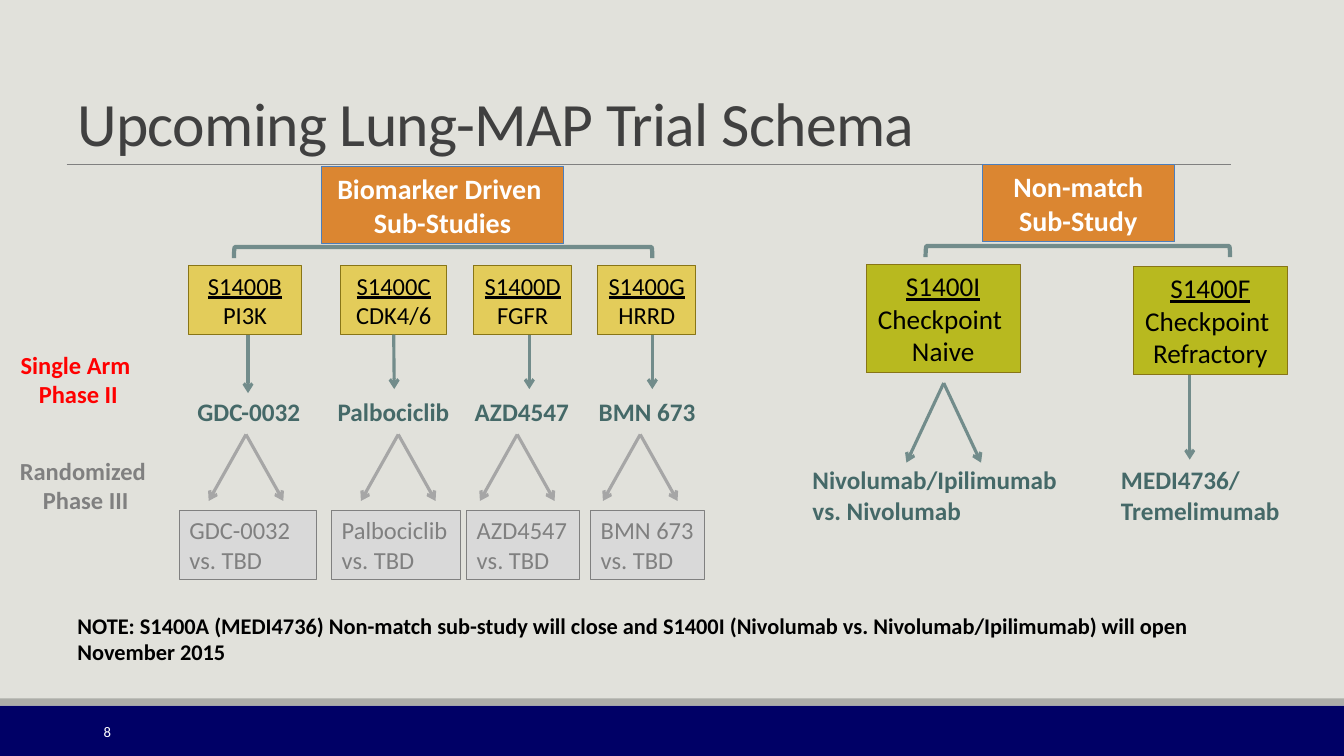
from lxml import etree
from pptx import Presentation
from pptx.dml.color import RGBColor
from pptx.enum.shapes import MSO_CONNECTOR, MSO_SHAPE
from pptx.enum.text import MSO_ANCHOR, PP_ALIGN
from pptx.oxml.ns import qn
from pptx.util import Pt

PX = 9144  # 100 px to the inch
FONT = "Calibri"
RECT, BRACKET = MSO_SHAPE.RECTANGLE, MSO_SHAPE.LEFT_BRACKET
STRAIGHT = MSO_CONNECTOR.STRAIGHT
LEFT, CENTER, RIGHT = PP_ALIGN.LEFT, PP_ALIGN.CENTER, PP_ALIGN.RIGHT
TOP, MIDDLE, BOTTOM = MSO_ANCHOR.TOP, MSO_ANCHOR.MIDDLE, MSO_ANCHOR.BOTTOM
SIDE_INSETS = {LEFT: (10, 0), CENTER: (0, 0), RIGHT: (0, 10)}

COLORS = {
    "background": "E1E1DB", "navy": "000066", "band": "ACADA8",
    "orange": "DB8631", "blue": "4B7EBC", "yellow": "E3CC5A",
    "olive": "B8B91F", "brown": "887517", "teal": "728C8B",
    "drug": "456968", "gray": "808080", "pale": "D9D9D9",
    "fork": "A6A6A6", "title": "404040", "red": "FF0000",
    "black": "000000", "white": "FFFFFF",
}


def rgb(name):
    return RGBColor.from_string(COLORS[name])


def write(sp, lines, size, color, align=LEFT, anchor=TOP, underline_first=False, **fmt):
    tf = sp.text_frame
    left, right = SIDE_INSETS[align]
    frame = {"word_wrap": True, "vertical_anchor": anchor,
             "margin_left": left * PX, "margin_right": right * PX,
             "margin_top": 5 * PX, "margin_bottom": 5 * PX}
    for name, value in frame.items():
        setattr(tf, name, value)
    for i, line in enumerate(lines):
        p = tf.add_paragraph() if i else tf.paragraphs[0]
        p.alignment = align
        r = p.add_run()
        r.text = line
        font = {"name": FONT, "size": Pt(size),
                "underline": underline_first and i == 0, **fmt}
        for name, value in font.items():
            setattr(r.font, name, value)
        r.font.color.rgb = rgb(color)


def add_text(slide, box, lines, size, color, **fmt):
    sp = slide.shapes.add_textbox(*(v * PX for v in box))
    write(sp, lines, size, color, **fmt)
    return sp


def add_box(slide, box, fill, line=None):
    sp = slide.shapes.add_shape(RECT, *(v * PX for v in box))
    sp.shadow.inherit = False
    sp.fill.solid()
    sp.fill.fore_color.rgb = rgb(fill)
    if line:
        sp.line.color.rgb = rgb(line)
        sp.line.width = Pt(0.75)
    else:
        sp.line.fill.background()
    return sp


def add_line(slide, start, end, color, width=2.25, arrow=True):
    cx = slide.shapes.add_connector(STRAIGHT, *(v * PX for v in start + end))
    cx.line.color.rgb = rgb(color)
    cx.line.width = Pt(width)
    if arrow:
        etree.SubElement(cx.line._get_or_add_ln(), qn("a:tailEnd"), type="arrow")
    etree.SubElement(cx._element.spPr, qn("a:effectLst"))
    return cx


def add_fork(slide, x, y, drop, color):
    for dx in (37, -37):
        add_line(slide, (x, y), (x + dx, y + drop), color)


def add_bracket(slide, x, y, w, h):
    # A left bracket turned a quarter, so that it opens downwards
    left, top = x + (w - h) / 2, y + (h - w) / 2
    sp = slide.shapes.add_shape(BRACKET, *(int(v * PX) for v in (left, top, h, w)))
    sp.rotation = 90
    sp.shadow.inherit = False
    sp.fill.background()
    sp.line.color.rgb = rgb("teal")
    sp.line.width = Pt(3)


def add_heading(slide, box, lines, bracket):
    sp = add_box(slide, box, "orange", "blue")
    write(sp, lines, 20, "white", align=CENTER, anchor=MIDDLE, bold=True)
    add_bracket(slide, *bracket)


def add_card(slide, box, lines, fill, size):
    sp = add_box(slide, box, fill, "brown")
    write(sp, lines, size, "black", align=CENTER, anchor=MIDDLE, underline_first=True)
    return sp


def add_stem(slide, card, box, x, bottom):
    left, top, w, h = box
    cx = add_line(slide, (x, top + h), (x, bottom), "teal")
    if abs(left + w / 2 - x) <= 1:
        cx.begin_connect(card, 2)


def build_frame(slide, w, h):
    add_box(slide, (0, h - 50, w, 50), "navy")
    add_box(slide, (0, h - 57, w, 7), "band")
    add_line(slide, (66, 163), (1221, 163), "gray", 0.5, arrow=False)
    sp = add_text(slide, (67, 4, 1153, 159), ["Upcoming Lung-MAP Trial Schema"],
                  44, "title", anchor=BOTTOM)
    p = sp.text_frame.paragraphs[0]
    p.line_spacing = 0.85
    p.runs[0].font._element.set("spc", "-50")
    add_text(slide, (11, h - 44, 109, 40), ["8"], 10.5, "white",
             align=RIGHT, anchor=MIDDLE)


def build_phase_labels(slide):
    add_text(slide, (10, 342, 130, 69), ["Single Arm", " Phase II"], 17.5, "red",
             align=CENTER, bold=True)
    add_text(slide, (9, 447, 152, 69), ["Randomized ", "Phase III"], 17.5, "gray",
             align=CENTER, bold=True)


def build_biomarker(slide, top):
    add_heading(slide, (319, top, 240, 77), ["Biomarker Driven ", "Sub-Studies"],
                (232, top + 80, 415, 11))
    # study, target, drug, then (left, width) of card, drug and arm,
    # and the x of stem and fork with the end of the stem
    studies = [
        ("S1400B", "PI3K", "GDC-0032", (187, 112), (186, 125), (178, 136), 246, 244, 225),
        ("S1400C", "CDK4/6", "Palbociclib", (338, 105), (325, 133), (329, 128), 391, 395, 221),
        ("S1400D", "FGFR", "AZD4547", (470, 97), (461, 115), (463, 112), 525, 513, 221),
        ("S1400G", "HRRD", "BMN 673", (593, 97), (584, 117), (586, 113), 647, 635, 221),
    ]
    for study, target, drug, card_x, drug_x, arm_x, stem, fork, stem_end in studies:
        box = (card_x[0], top + 98, card_x[1], 69)
        card = add_card(slide, box, [study, target], "yellow", 17.5)
        add_stem(slide, card, box, stem, top + stem_end)
        add_text(slide, (drug_x[0], top + 223, drug_x[1], 40), [drug], 18, "drug", bold=True)
        add_fork(slide, fork, top + 266, 66, "fork")
        arm = add_box(slide, (arm_x[0], top + 341, arm_x[1], 69), "pale", "gray")
        write(arm, [drug, "vs. TBD"], 17.5, "gray", anchor=MIDDLE)


def build_non_match(slide, top):
    add_heading(slide, (974, top, 191, 77), ["Non-match", "Sub-Study"],
                (918, top + 81, 302, 11))
    # Checkpoint naive
    add_card(slide, (859, top + 99, 153, 108), ["S1400I", "Checkpoint ", "Naive"],
             "olive", 19.4)
    add_fork(slide, 936, top + 217, 79, "teal")
    add_text(slide, (796, top + 293, 273, 71), ["Nivolumab/Ipilimumab", "vs. Nivolumab"],
             18, "drug", bold=True)
    # Checkpoint refractory
    box = (1124, top + 101, 153, 108)
    card = add_card(slide, box, ["S1400F", "Checkpoint ", "Refractory"], "olive", 19.4)
    add_stem(slide, card, box, 1180, top + 293)
    add_text(slide, (1102, top + 293, 193, 71), ["MEDI4736/ Tremelimumab"],
             18, "drug", bold=True)


def build_note(slide):
    note = ("NOTE: S1400A (MEDI4736) Non-match sub-study will close and S1400I "
            "(Nivolumab vs. Nivolumab/Ipilimumab) will open November 2015")
    add_text(slide, (67, 602, 1153, 64), [note], 16, "black", bold=True)


def main():
    prs = Presentation()
    w, h = 1333, 750
    prs.slide_width, prs.slide_height = w * PX, h * PX
    slide = prs.slides.add_slide(prs.slide_layouts[6])
    slide.background.fill.solid()
    slide.background.fill.fore_color.rgb = rgb("background")
    build_frame(slide, w, h)
    build_phase_labels(slide)
    build_biomarker(slide, 165)
    build_non_match(slide, 163)
    build_note(slide)
    prs.save("out.pptx")


if __name__ == "__main__":
    main()
